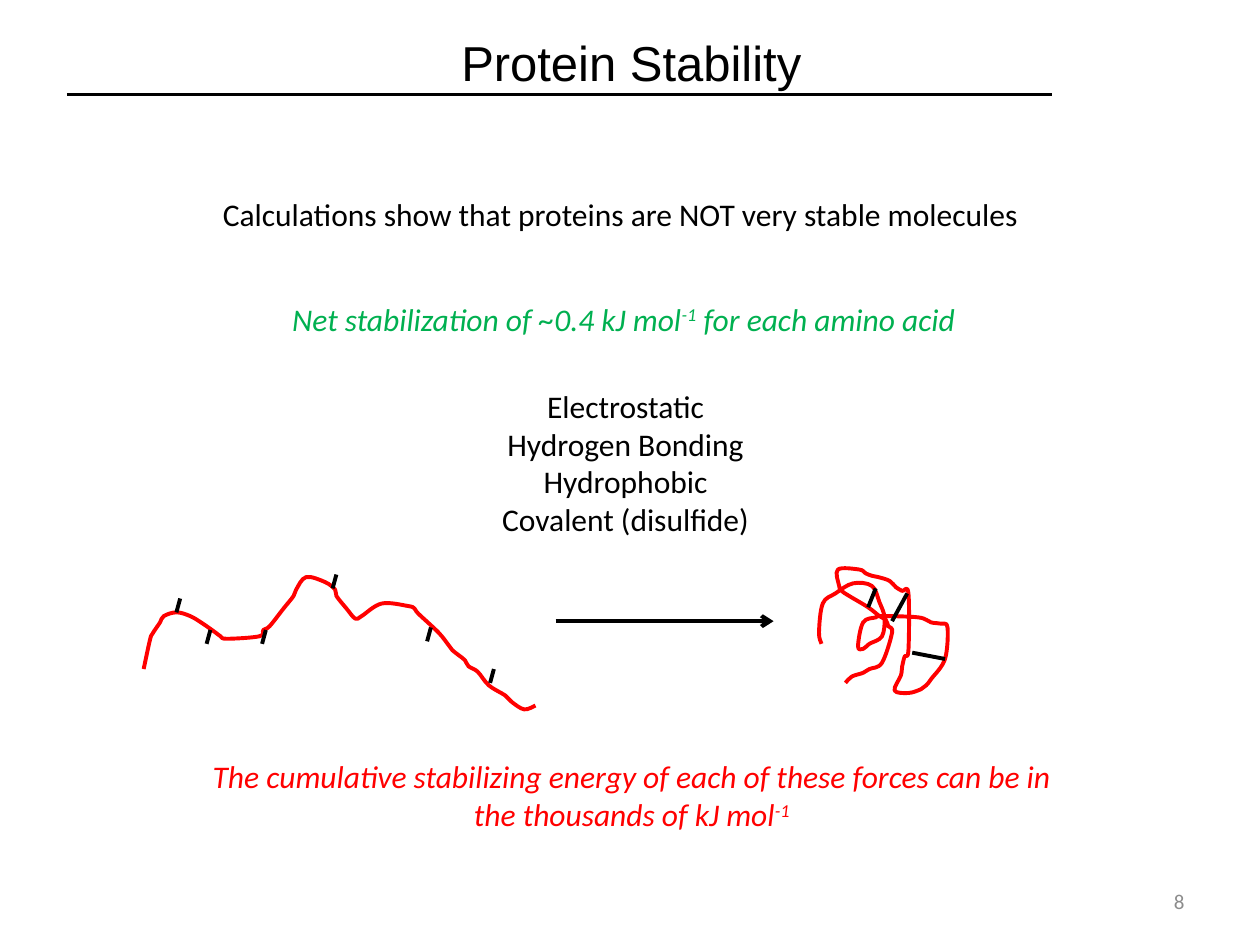
from lxml import etree
from pptx import Presentation
from pptx import util as u
from pptx.dml.color import RGBColor
from pptx.enum import shapes, text
from pptx.oxml.ns import qn

W, H = 10, 7.5
BLACK, RED, GREEN, GREY, WHITE = "000000", "FF0000", "00B050", "8C8C8C", "FFFFFF"
LEFT, CENTER, RIGHT = text.PP_ALIGN.LEFT, text.PP_ALIGN.CENTER, text.PP_ALIGN.RIGHT
TOP, MIDDLE = text.MSO_ANCHOR.TOP, text.MSO_ANCHOR.MIDDLE
FIXED, GROW = text.MSO_AUTO_SIZE.NONE, text.MSO_AUTO_SIZE.SHAPE_TO_FIT_TEXT

TITLE = "Protein Stability"
FORCES = ["Electrostatic", "Hydrogen Bonding", "Hydrophobic", "Covalent (disulfide)"]
NOTES = [
    ("Calculations show that proteins are NOT very stable molecules",
     (1.67, 1.5, 6.59, 0.4), dict(wrap=False)),
    ("Net stabilization of ~0.4 kJ mol^-1^ for each amino acid",
     (2.22, 2.33, 5.62, 0.4), dict(wrap=False, color=GREEN, italic=True)),
    ("The cumulative stabilizing energy of each of these forces can be in "
     "the thousands of kJ mol^-1",
     (1.43, 5.96, 7.17, 0.71), dict(align=CENTER, color=RED, italic=True)),
    ("8", (7.17, 6.95, 2.33, 0.4),
     dict(align=RIGHT, size=12, color=GREY, anchor=MIDDLE, fit=FIXED)),
]
FOLDED = [
    (6.52, 5.11), (6.5, 5.02), (6.53, 4.79), (6.63, 4.71), (6.77, 4.63), (6.92, 4.65),
    (6.98, 4.78), (7.02, 4.9), (7, 5.05), (6.9, 5.11), (6.85, 5.15), (6.81, 5.13),
    (6.85, 4.94), (6.95, 4.9), (7, 4.89), (7.29, 4.9), (7.39, 4.94), (7.47, 4.95),
    (7.52, 4.98), (7.5, 5.23), (7.39, 5.39), (7.35, 5.44), (7.31, 5.47), (7.21, 5.5),
    (7.1, 5.48), (7.15, 5.36), (7.16, 5.29), (7.18, 5.21), (7.21, 5.16), (7.21, 4.71),
    (7.16, 4.69), (7.11, 4.66), (7.06, 4.61), (6.97, 4.58), (6.92, 4.57), (6.87, 4.55),
    (6.82, 4.52), (6.65, 4.52), (6.66, 4.65), (6.68, 4.69), (6.74, 4.73), (6.89, 4.82),
    (6.98, 4.89), (7.03, 4.92), (7.05, 4.97), (7.08, 5.02), (7, 5.26), (6.9, 5.31),
    (6.85, 5.34), (6.76, 5.37), (6.71, 5.42),
]
UNFOLDED = [
    (1.14, 5.31), (1.19, 5.08), (1.21, 5.03), (1.27, 4.94), (1.3, 4.89), (1.4, 4.86),
    (1.51, 4.89), (1.61, 4.95), (1.71, 5.02), (1.75, 5.05), (1.8, 5.07), (2.06, 5.05),
    (2.09, 5), (2.14, 4.97), (2.25, 4.83), (2.33, 4.73), (2.35, 4.68), (2.43, 4.58),
    (2.58, 4.62), (2.66, 4.68), (2.67, 4.73), (2.75, 4.83), (2.82, 4.91), (2.87, 4.89),
    (3.03, 4.79), (3.24, 4.81), (3.29, 4.83), (3.32, 4.87), (3.48, 5.02), (3.56, 5.12),
    (3.59, 5.16), (3.64, 5.2), (3.69, 5.24), (3.72, 5.29), (3.79, 5.33), (3.88, 5.44),
    (4.01, 5.52), (4.06, 5.57), (4.16, 5.63), (4.25, 5.6),
]
SIDE_CHAINS = [(1.4, 4.86), (2.64, 4.67), (1.64, 5.11), (3.39, 5.09), (3.89, 5.42), (2.08, 5.11)]
BONDS = [((7.08, 4.93), (7.2, 4.71)), ((7.24, 5.18), (7.5, 5.23)), ((6.89, 4.82), (6.95, 4.67))]


def rgb(color):
    return RGBColor.from_string(color)


def place(sp, box):
    sp.left, sp.top, sp.width, sp.height = map(u.Inches, box)


def write(sp, lines, size=18, font="Calibri", color=BLACK, italic=False,
          align=LEFT, anchor=TOP, wrap=True, fit=GROW):
    tf = sp.text_frame
    tf.auto_size, tf.word_wrap, tf.vertical_anchor = fit, wrap, anchor
    for i, line in enumerate(lines):
        p = tf.add_paragraph() if i else tf.paragraphs[0]
        p.alignment, p.space_before = align, u.Pt(0)
        for j, part in enumerate(line.split("^")):
            r = p.add_run()
            r.text = part
            r.font.size, r.font.name, r.font.italic = u.Pt(size), font, italic
            r.font.color.rgb = rgb(color)
            if j % 2:
                r.font._element.set("baseline", "30000")


def add_line(s, start, end, width=2.25, arrow=False):
    points = [u.Inches(v) for v in (*start, *end)]
    c = s.shapes.add_connector(shapes.MSO_CONNECTOR.STRAIGHT, *points)
    c.line.color.rgb, c.line.width = rgb(BLACK), u.Pt(width)
    if arrow:
        etree.SubElement(c.line._get_or_add_ln(), qn("a:tailEnd"), type="arrow")
    etree.SubElement(c._element.spPr, qn("a:effectLst"))


def curve(sp):
    pts = [(int(pt.get("x")), int(pt.get("y"))) for pt in sp._element.iter(qn("a:pt"))]
    ends = [pts[0], *pts, pts[-1]]
    segments = list(sp._element.iter(qn("a:lnTo")))
    for seg, a, b, c, d in zip(segments, ends, ends[1:], ends[2:], ends[3:]):
        seg.tag = qn("a:cubicBezTo")
        leave = [q + (r - p) / 6 for p, q, r in zip(a, b, c)]
        arrive = [r - (v - q) / 6 for q, r, v in zip(b, c, d)]
        for i, (x, y) in enumerate((leave, arrive)):
            pt = etree.Element(qn("a:pt"), x=str(round(x)), y=str(round(y)))
            seg.insert(i, pt)


def add_chain(s, points):
    fb = s.shapes.build_freeform(*map(u.Inches, points[0]))
    fb.add_line_segments([tuple(map(u.Inches, pt)) for pt in points[1:]], close=False)
    sp = fb.convert_to_shape()
    curve(sp)
    sp.shadow.inherit = False
    sp.fill.background()
    sp.line.color.rgb, sp.line.width = rgb(RED), u.Pt(2.25)


def main():
    prs = Presentation()
    prs.slide_width, prs.slide_height = u.Inches(W), u.Inches(H)
    s = prs.slides.add_slide(prs.slide_layouts[1])
    title, body = s.placeholders

    place(title, (0.94, 0.28, 8.14, 0.43))
    title.fill.solid()
    title.fill.fore_color.rgb = rgb(WHITE)
    write(title, [TITLE], size=28, font="Arial", align=CENTER, anchor=MIDDLE, fit=FIXED)
    add_line(s, (0.53, 0.75), (8.35, 0.75), width=1.5)

    place(body, (3.87, 3.02, 2.19, 1.31))
    write(body, FORCES, align=CENTER, wrap=False)
    for p in body.text_frame.paragraphs:
        pPr = p._p.get_or_add_pPr()
        pPr.set("marL", "0")
        pPr.set("indent", "0")
        etree.SubElement(pPr, qn("a:buNone"))

    for line, box, style in NOTES:
        sp = s.shapes.add_textbox(*map(u.Inches, box))
        write(sp, [line], **style)

    add_chain(s, FOLDED)
    add_chain(s, UNFOLDED)
    add_line(s, (4.41, 4.93), (6.14, 4.93), arrow=True)
    for x, y in SIDE_CHAINS:
        add_line(s, (x, y), (x + 0.03, y - 0.11))
    for start, end in BONDS:
        add_line(s, start, end)

    prs.save("out.pptx")


if __name__ == "__main__":
    main()
